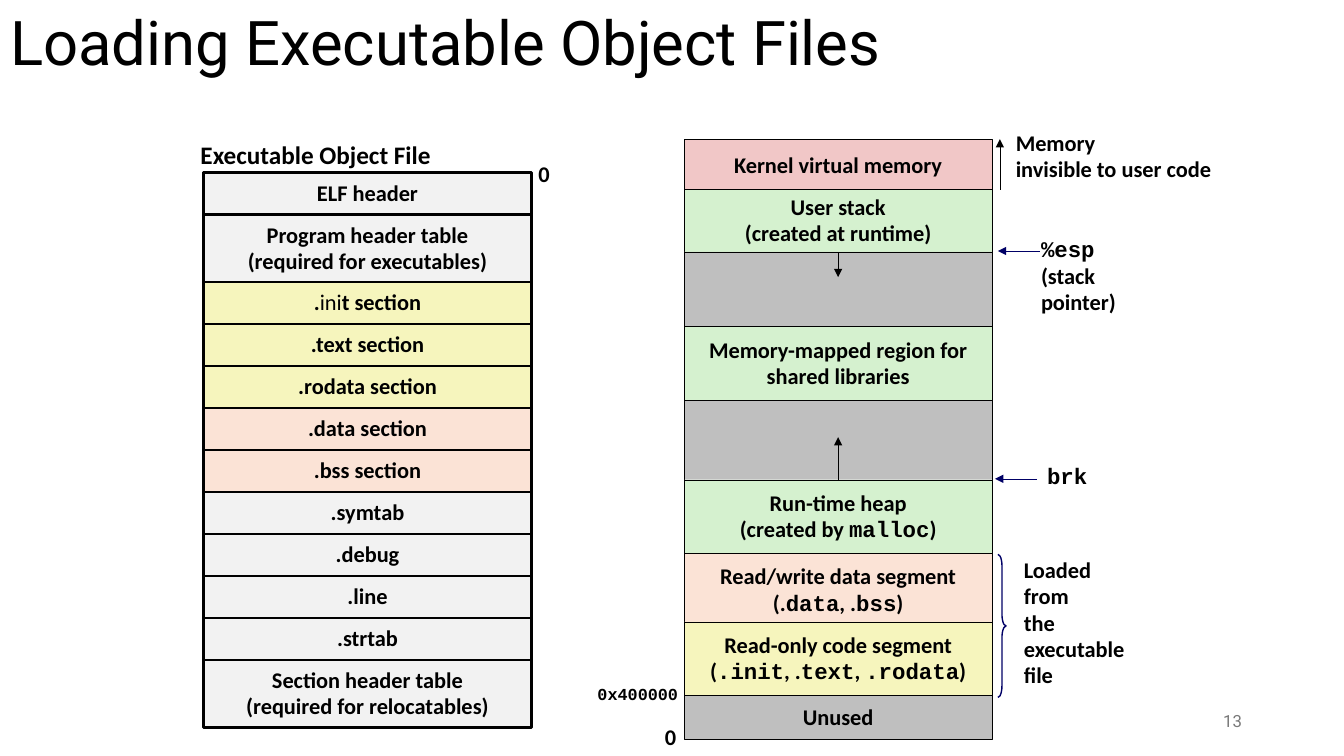
from lxml.etree import SubElement
from pptx import Presentation
from pptx.dml.color import RGBColor
from pptx.enum.shapes import MSO_CONNECTOR, MSO_SHAPE
from pptx.enum.text import MSO_ANCHOR, MSO_AUTO_SIZE, PP_ALIGN
from pptx.oxml.ns import qn
from pptx.util import Pt

BLACK = RGBColor(0x00, 0x00, 0x00)
NAVY = RGBColor(0x00, 0x00, 0x66)
MUTED = RGBColor(0x79, 0x79, 0x79)
PALE = RGBColor(0xF2, 0xF2, 0xF2)
GRAY = RGBColor(0xBF, 0xBF, 0xBF)
YELLOW = RGBColor(0xF6, 0xF5, 0xBD)
PEACH = RGBColor(0xFB, 0xE3, 0xD6)
GREEN = RGBColor(0xD5, 0xF1, 0xCF)
PINK = RGBColor(0xF1, 0xC7, 0xC7)

HEADING, BODY, MONO = "Roboto", "Calibri", "Courier New"
HAIRLINE = 0.25


def code(text):
    return text, {"name": MONO}


def light(text):
    return text, {"bold": False}


def write_lines(frame, lines, align=PP_ALIGN.LEFT, size=16):
    """Each line is a string or a list of plain and styled runs."""
    for number, line in enumerate(lines):
        paragraph = frame.add_paragraph() if number else frame.paragraphs[0]
        pieces = [line] if isinstance(line, str) else line
        all_code = pieces[0][1:] == ({"name": MONO},) and len(pieces) == 1
        paragraph.alignment = align
        paragraph.line_spacing = 0.94 if all_code else 0.98
        font = paragraph.font
        font.name, font.size, font.bold = BODY, Pt(size), True
        font.color.rgb = BLACK
        for piece in pieces:
            text, style = (piece, {}) if isinstance(piece, str) else piece
            run = paragraph.add_run()
            run.text = text
            target = font if len(pieces) == 1 else run.font
            for attribute, value in style.items():
                setattr(target, attribute, value)


def add_label(slide, left, top, width, height, lines, wrap=False, **text_format):
    label = slide.shapes.add_textbox(Pt(left), Pt(top), Pt(width), Pt(height))
    write_lines(label.text_frame, lines, **text_format)
    label.text_frame.word_wrap = wrap
    label.text_frame.auto_size = MSO_AUTO_SIZE.SHAPE_TO_FIT_TEXT


def add_arrow(slide, x1, y1, x2, y2, color=BLACK):
    arrow = slide.shapes.add_connector(
        MSO_CONNECTOR.STRAIGHT, Pt(x1), Pt(y1), Pt(x2), Pt(y2))
    arrow.line.color.rgb = color
    arrow.line.width = Pt(HAIRLINE)
    SubElement(arrow.line._get_or_add_ln(), qn("a:tailEnd"), type="triangle")
    SubElement(arrow._element.spPr, qn("a:effectLst"))


def add_stack(slide, left, top, width, rows, line_width):
    """Pile up rows of (height, overlap, fill, lines); return their edges."""
    edges = [top]
    for height, overlap, fill, lines in rows:
        row = slide.shapes.add_shape(
            MSO_SHAPE.RECTANGLE, Pt(left), Pt(edges[-1]), Pt(width), Pt(height + overlap))
        row.shadow.inherit = False
        row.fill.solid()
        row.fill.fore_color.rgb = fill
        row.line.color.rgb = BLACK
        row.line.width = Pt(line_width)
        row.text_frame.vertical_anchor = MSO_ANCHOR.MIDDLE
        row.text_frame.word_wrap = False
        write_lines(row.text_frame, lines, PP_ALIGN.CENTER)
        edges.append(edges[-1] + height)
    return edges


def add_object_file(slide, left, top, width):
    sections = [
        (PALE, ["ELF header"]),
        (PALE, ["Program header table", "(required for executables)"]),
        (YELLOW, [[".", light("ini"), "t section"]]),
        (YELLOW, [".text section"]),
        (YELLOW, [".rodata section"]),
        (PEACH, [".data section"]),
        (PEACH, [".bss section"]),
        (PALE, [".symtab"]),
        (PALE, [".debug"]),
        (PALE, [".line"]),
        (PALE, [".strtab"]),
        (PALE, ["Section header table", "(required for relocatables)"]),
    ]
    heights = {1: 30, 2: 48.3}
    rows = [(heights[len(lines)], 0, fill, lines) for fill, lines in sections]
    add_stack(slide, left, top, width, rows, 2)
    add_label(slide, left - 10, top - 26, 180, 28.8, ["Executable Object File"],
              align=PP_ALIGN.CENTER, size=18)
    add_label(slide, left + width - 2, top - 11.5, 22.3, 26.6, ["0"])


def add_memory_image(slide, left, top, width):
    rows = [
        (36, 2, PINK, ["Kernel virtual memory"]),
        (44.6, 0, GREEN, ["User stack", "(created at runtime)"]),
        (53.3, 0, GRAY, []),
        (52.6, 0, GREEN, ["Memory-mapped region for", "shared libraries"]),
        (56.8, 0, GRAY, []),
        (52.6, 0, GREEN, ["Run-time heap", ["(created by ", code("malloc"), ")"]]),
        (49, 3.6, PEACH, ["Read/write data segment",
                          ["(.", code("data"), ", .", code("bss"), ")"]]),
        (52.6, 0, YELLOW, ["Read-only code segment",
                           ["(", code(".init"), ", .", code("text"), ", ",
                            code(".rodata"), ")"]]),
        (31, 0, GRAY, ["Unused"]),
    ]
    edges = add_stack(slide, left, top, width, rows, HAIRLINE)
    kernel, user_stack, esp, _, _, brk, data, _, unused, bottom = edges
    right, middle = left + width, left + width / 2

    # Growth of the stack and the heap
    add_arrow(slide, middle, esp, middle, esp + 18)
    add_arrow(slide, middle, brk, middle, brk - 30.5)

    # Kernel range and pointers
    add_arrow(slide, right + 5.7, user_stack, right + 5.7, kernel)
    add_label(slide, right + 10, kernel - 10, 201.6, 45.4,
              ["Memory", "invisible to user code"], wrap=True)
    add_arrow(slide, right + 34.5, esp - 0.7, right + 4.3, esp - 0.7, NAVY)
    add_label(slide, right + 28, esp - 13.7, 68.4, 63.4,
              [[code("%esp")], "(stack", "pointer)"])
    add_arrow(slide, right + 32.3, brk - 0.7, right + 2.2, brk - 0.7, NAVY)
    add_label(slide, right + 32.3, brk - 14.4, 43.2, 25.9, [[code("brk")]])

    # Addresses
    add_label(slide, left - 69.2, unused - 10.8, 72.7, 21.6, [[code("0x400000")]], size=12)
    add_label(slide, left - 21, bottom - 13.7, 22.3, 26.6, ["0"])

    # Loaded segments
    brace = slide.shapes.add_shape(
        MSO_SHAPE.RIGHT_BRACE, Pt(right + 4.3), Pt(data + 0.7), Pt(5.8), Pt(102.2))
    brace.adjustments[0] = 1.417
    brace.shadow.inherit = False
    brace.fill.background()
    brace.line.color.rgb = NAVY
    brace.line.width = Pt(1)
    add_label(slide, right + 15.8, data - 0.7, 90.7, 102.2,
              ["Loaded", "from", "the", "executable", "file"])


def add_title(slide, left, top, width, height):
    title = slide.shapes.title
    title.left, title.top, title.width, title.height = map(Pt, (left, top, width, height))
    title.text_frame.text = "Loading Executable Object Files"
    title.text_frame.vertical_anchor = MSO_ANCHOR.MIDDLE
    heading = title.text_frame.paragraphs[0]
    heading.alignment = PP_ALIGN.LEFT
    heading.line_spacing = 0.9
    heading.font.name, heading.font.size = HEADING, Pt(44)
    heading.font.color.rgb = BLACK


def add_page_number(slide, left, top, width, height):
    footer = slide.shapes.add_textbox(Pt(left), Pt(top), Pt(width), Pt(height))
    footer.text_frame.word_wrap = True
    footer.text_frame.vertical_anchor = MSO_ANCHOR.MIDDLE
    page = footer.text_frame.paragraphs[0]
    page.text = "13"
    page.alignment = PP_ALIGN.RIGHT
    page.font.name, page.font.size = HEADING, Pt(12)
    page.font.color.rgb = MUTED


def main():
    presentation = Presentation()
    presentation.slide_width, presentation.slide_height = Pt(960), Pt(540)
    slide = presentation.slides.add_slide(presentation.slide_layouts[5])
    add_title(slide, 0, -3.6, 748.8, 72)
    add_object_file(slide, 145.5, 123.2, 234)
    add_memory_image(slide, 488.9, 99.4, 219.6)
    add_page_number(slide, 678.3, 500.4, 216, 28.8)
    presentation.save("out.pptx")


if __name__ == "__main__":
    main()
